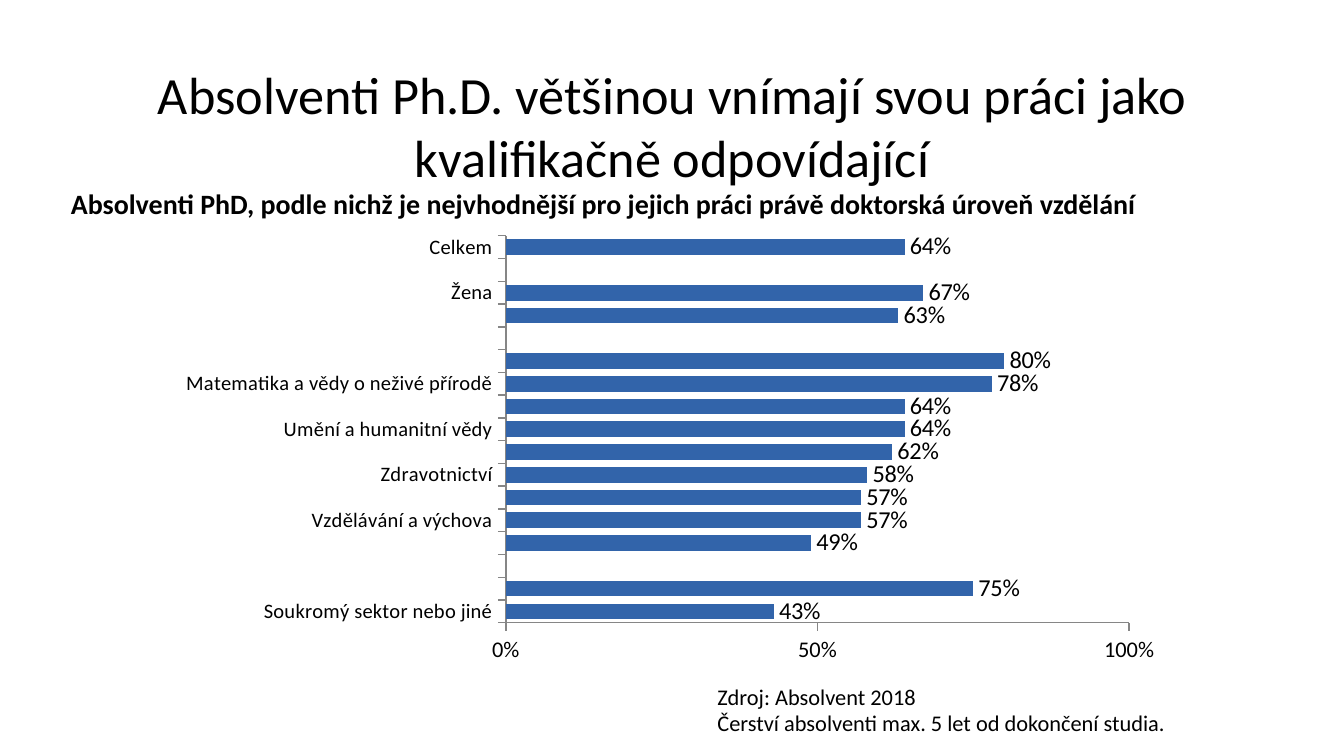
from lxml.etree import SubElement
from pptx import Presentation
from pptx.chart.data import CategoryChartData
from pptx.dml.color import RGBColor
from pptx.enum.chart import XL_CHART_TYPE as CT, XL_LABEL_POSITION as LP, XL_TICK_MARK as TM
from pptx.enum.text import MSO_ANCHOR as MA, PP_ALIGN as PA
from pptx.oxml.ns import qn
from pptx.util import Cm, Pt

TITLE = "Absolventi Ph.D. většinou vnímají svou práci jako kvalifikačně odpovídající"
SUBTITLE = "Absolventi PhD, podle nichž je nejvhodnější pro jejich práci právě doktorská úroveň vzdělání"
SOURCE = ["Zdroj: Absolvent 2018", "Čerství absolventi max. 5 let od dokončení studia."]
SHARES = [
    ("Soukromý sektor nebo jiné", 0.43),
    ("Veřejný sektor", 0.75),
    ("", None),
    ("Obchod, administr., právo, služby ", 0.49),
    ("Vzdělávání a výchova", 0.57),
    ("Zemědělství, lesnictví", 0.57),
    ("Zdravotnictví", 0.58),
    ("Společenské vědy", 0.62),
    ("Umění a humanitní vědy", 0.64),
    ("Technika, výroba a staveb., ICT ", 0.64),
    ("Matematika a vědy o neživé přírodě", 0.78),
    ("Biologické a environmentální vědy", 0.8),
    ("", None),
    ("Muž", 0.63),
    ("Žena", 0.67),
    ("", None),
    ("Celkem", 0.64),
]
THEME = {
    "font": "Calibri", "text": "000000", "bar": "3264AA", "axis": "868686",
    "title": 28, "subtitle": 15, "source": 12, "chart": 10,
    "category": 11, "value": 12, "label": 13,
}
PLOT = {"x": 0.34, "y": 0.02, "w": 0.62, "h": 0.87}


def color(name):
    return RGBColor.from_string(THEME[name])


def set_font(font, role, bold=False):
    font.name = THEME["font"]
    font.size = Pt(THEME[role])
    font.bold = bold
    font.color.rgb = color("text")


def write(sp, lines, role, bold=False, align=PA.LEFT, anchor=MA.TOP):
    tf = sp.text_frame
    tf.word_wrap = True
    tf.vertical_anchor = anchor
    for i, line in enumerate(lines):
        p = tf.paragraphs[0] if i == 0 else tf.add_paragraph()
        p.alignment = align
        r = p.add_run()
        r.text = line
        set_font(r.font, role, bold)


def style_axis(axis, role):
    axis.has_major_gridlines = False
    axis.major_tick_mark = TM.OUTSIDE
    axis.minor_tick_mark = TM.NONE
    axis.format.line.color.rgb = color("axis")
    axis.format.line.width = Pt(0.75)
    set_font(axis.tick_labels.font, role)


def place_plot(chart):
    area = chart.plots[0]._element.getparent()
    for old in area.findall(qn("c:layout")):
        area.remove(old)
    layout = SubElement(area, qn("c:layout"))
    area.insert(0, layout)
    manual = SubElement(layout, qn("c:manualLayout"))
    settings = {"layoutTarget": "inner", "xMode": "edge", "yMode": "edge", **PLOT}
    for tag, value in settings.items():
        SubElement(manual, qn("c:" + tag)).set("val", str(value))


def add_shares(s):
    data = CategoryChartData(number_format="0%")
    data.categories = [name for name, _ in SHARES]
    data.add_series("Series 1", [share for _, share in SHARES])
    chart = s.shapes.add_chart(
        CT.BAR_CLUSTERED, Cm(3.1), Cm(4.29), Cm(19), Cm(8.41), data).chart
    chart.has_legend = False
    chart.has_title = False
    set_font(chart.font, "chart")
    style_axis(chart.category_axis, "category")
    axis = chart.value_axis
    style_axis(axis, "value")
    axis.minimum_scale, axis.maximum_scale, axis.major_unit = 0, 1, 0.5
    axis.tick_labels.number_format = "0%"
    axis.tick_labels.number_format_is_linked = False

    plot = chart.plots[0]
    plot.gap_width = 45
    plot.vary_by_categories = False
    fill = plot.series[0].format.fill
    fill.solid()
    fill.fore_color.rgb = color("bar")
    plot.has_data_labels = True
    labels = plot.data_labels
    labels.show_value = True
    labels.position = LP.OUTSIDE_END
    labels.number_format = "0%"
    labels.number_format_is_linked = False
    set_font(labels.font, "label")
    place_plot(chart)


def main():
    prs = Presentation()
    prs.slide_width, prs.slide_height = Cm(25.4), Cm(14.29)
    s = prs.slides.add_slide(prs.slide_layouts[5])
    title = s.shapes.title
    title.left, title.top, title.width, title.height = Cm(1.27), Cm(1.17), Cm(22.86), Cm(2.39)
    write(title, [TITLE], "title", align=PA.CENTER, anchor=MA.MIDDLE)
    add_shares(s)
    source = s.shapes.add_textbox(Cm(13.31), Cm(12.78), Cm(9.68), Cm(1.27))
    write(source, SOURCE, "source")
    subtitle = s.shapes.add_textbox(Cm(1.09), Cm(3.4), Cm(21.64), Cm(0.89))
    write(subtitle, [SUBTITLE], "subtitle", bold=True)
    prs.save("out.pptx")


if __name__ == "__main__":
    main()
